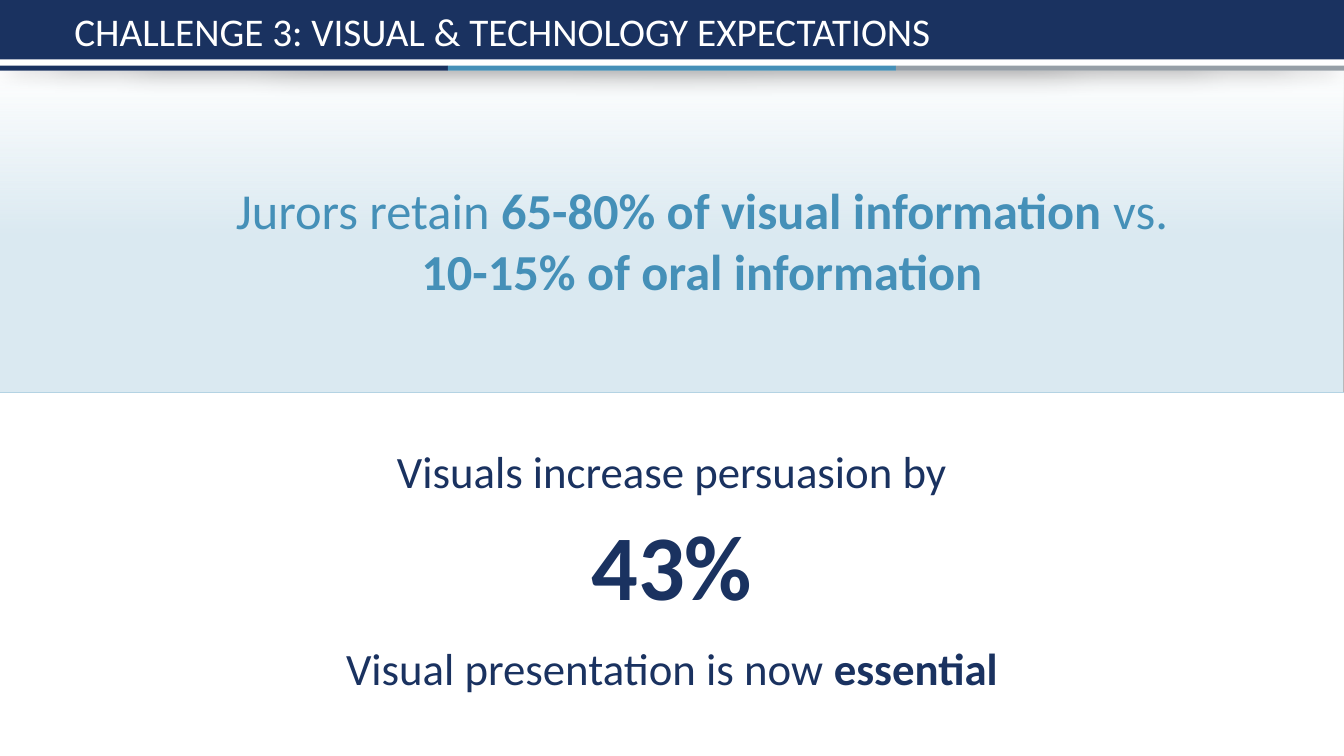
from dataclasses import dataclass

from lxml.etree import SubElement
from pptx import Presentation
from pptx.dml.color import RGBColor as RGB
from pptx.enum.shapes import MSO_CONNECTOR as CONN, MSO_SHAPE as SHAPE
from pptx.enum.text import MSO_ANCHOR as ANCHOR, MSO_AUTO_SIZE as FIT, PP_ALIGN as ALIGN
from pptx.oxml.ns import qn
from pptx.util import Pt


@dataclass(frozen=True)
class Theme:
    font: str = "Calibri"
    navy: RGB = RGB(0x1A, 0x32, 0x60)
    blue: RGB = RGB(0x45, 0x90, 0xB8)
    gray: RGB = RGB(0x96, 0x9F, 0xA7)
    pale: RGB = RGB(0xDA, 0xE9, 0xF1)
    rule: RGB = RGB(0xB4, 0xD3, 0xE3)
    white: RGB = RGB(0xFF, 0xFF, 0xFF)
    title: int = 28
    body: int = 32
    callout: int = 36
    figure: int = 66


@dataclass(frozen=True)
class Box:
    left: float
    top: float
    width: float
    height: float

    def lengths(self):
        return Pt(self.left), Pt(self.top), Pt(self.width), Pt(self.height)


@dataclass(frozen=True)
class Band:
    box: Box
    color: RGB
    kind: SHAPE = SHAPE.RECTANGLE


@dataclass(frozen=True)
class Statement:
    box: Box
    runs: tuple[tuple[str, bool], ...]  # wording, bold
    size: int
    color: RGB
    align: ALIGN = ALIGN.CENTER
    anchor: ANCHOR = ANCHOR.TOP
    fit: FIT = FIT.SHAPE_TO_FIT_TEXT


T = Theme()
WIDTH, HEIGHT = 960, 540
THIRD = WIDTH / 3
PANEL_TOP, PANEL_BOTTOM = 50.1, 280.6


def centered(top: float, width: float, height: float) -> Box:
    return Box((WIDTH - width) / 2, top, width, height)


HEADER_SHADE = Band(Box(0, 32.4, WIDTH, 17.3), T.white, SHAPE.OVAL)
HEADER = [
    Band(Box(0, 0, WIDTH, 50.4), T.white),
    Band(Box(0, 0, WIDTH, 42.5), T.navy),
]
STRIPES = [
    Band(Box(i * THIRD, 46.8, THIRD, 3.6), color)
    for i, color in enumerate((T.navy, T.blue, T.gray))
]
PANEL = Band(Box(0, PANEL_TOP, WIDTH, PANEL_BOTTOM - PANEL_TOP), T.pale)

STATEMENTS = [
    Statement(Box(46.1, 0, 868.3, 42.5),
              (("CHALLENGE 3: VISUAL & TECHNOLOGY EXPECTATIONS", False),),
              T.title, T.white, ALIGN.LEFT, ANCHOR.BOTTOM, FIT.NONE),
    Statement(Box(149, 124.6, 704.9, 94.5),
              (("Jurors retain ", False), ("65-80% of visual information ", True),
               ("vs. ", False), ("10-15% of oral information", True)),
              T.callout, T.blue),
    Statement(centered(313.2, 465.8, 46.1),
              (("Visuals increase persuasion by", False),), T.body, T.navy),
    Statement(centered(359.3, 178.6, 87.1), (("43%", True),), T.figure, T.navy),
    Statement(centered(454.3, 653, 46.1),
              (("Visual presentation is now ", False), ("essential", True)),
              T.body, T.navy),
]


def add_band(slide, band: Band):
    sp = slide.shapes.add_shape(band.kind, *band.box.lengths())
    sp.shadow.inherit = False
    sp.fill.solid()
    sp.fill.fore_color.rgb = band.color
    sp.line.fill.background()
    return sp


def add_soft_shadow(sp) -> None:
    effects = sp.element.spPr.find(qn("a:effectLst"))
    shadow = SubElement(effects, qn("a:outerShdw"), blurRad=str(Pt(16)), dist=str(Pt(3)),
                        dir="5400000", algn="t", rotWithShape="0")
    color = SubElement(shadow, qn("a:srgbClr"), val="000000")
    SubElement(color, qn("a:alpha"), val="40000")


def fade_from_top(sp, color: RGB, solid_at: float) -> None:
    sp.fill.gradient()
    sp.fill.gradient_angle = 270
    for stop, position in zip(sp.fill.gradient_stops, (0, solid_at)):
        stop.position = position
        stop.color.rgb = color
    first = next(sp.element.spPr.iter(qn("a:srgbClr")))
    SubElement(first, qn("a:alpha"), val="0")


def add_rule(slide, y: float, color: RGB) -> None:
    line = slide.shapes.add_connector(CONN.STRAIGHT, Pt(0), Pt(y), Pt(WIDTH), Pt(y))
    line.line.color.rgb = color
    line.line.width = Pt(1)
    SubElement(line.element.spPr, qn("a:effectLst"))


def add_statement(slide, item: Statement) -> None:
    tf = slide.shapes.add_textbox(*item.box.lengths()).text_frame
    tf.word_wrap = True
    tf.auto_size = item.fit
    tf.vertical_anchor = item.anchor
    p = tf.paragraphs[0]
    p.alignment = item.align
    p.font.name = T.font
    p.font.size = Pt(item.size)
    p.font.color.rgb = item.color
    for text, bold in item.runs:
        r = p.add_run()
        r.text = text
        r.font.bold = bold


def main() -> None:
    prs = Presentation()
    prs.slide_width, prs.slide_height = Pt(WIDTH), Pt(HEIGHT)
    slide = prs.slides.add_slide(prs.slide_layouts[6])

    # Header bar with its shadow and three-colour stripe
    add_soft_shadow(add_band(slide, HEADER_SHADE))
    for band in HEADER + STRIPES:
        add_band(slide, band)

    # Fading panel behind the callout, closed by a thin rule
    fade_from_top(add_band(slide, PANEL), T.pale, 0.52)
    add_rule(slide, PANEL_BOTTOM, T.rule)

    # Title, callout and persuasion figures
    for item in STATEMENTS:
        add_statement(slide, item)

    prs.save("out.pptx")


if __name__ == "__main__":
    main()
